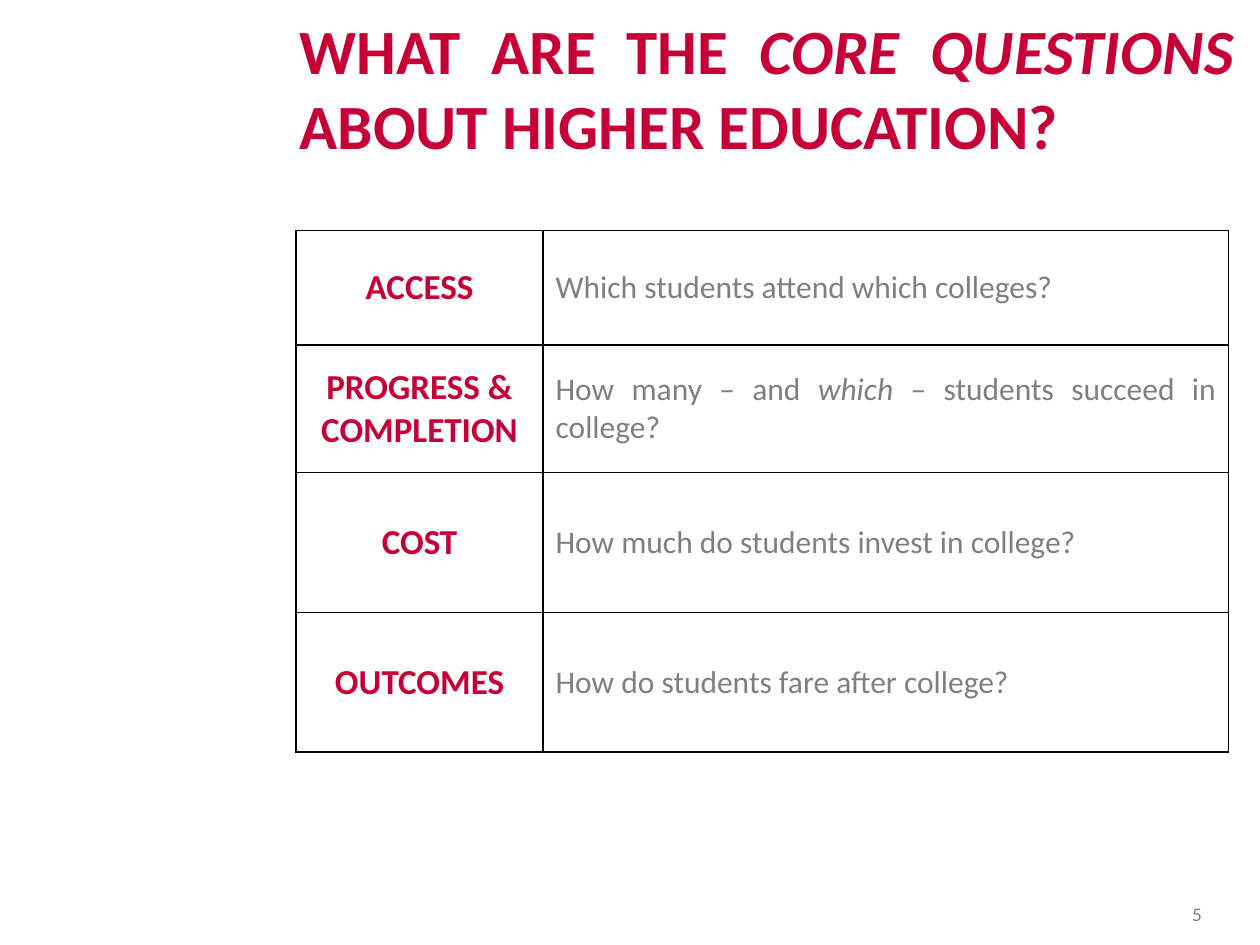
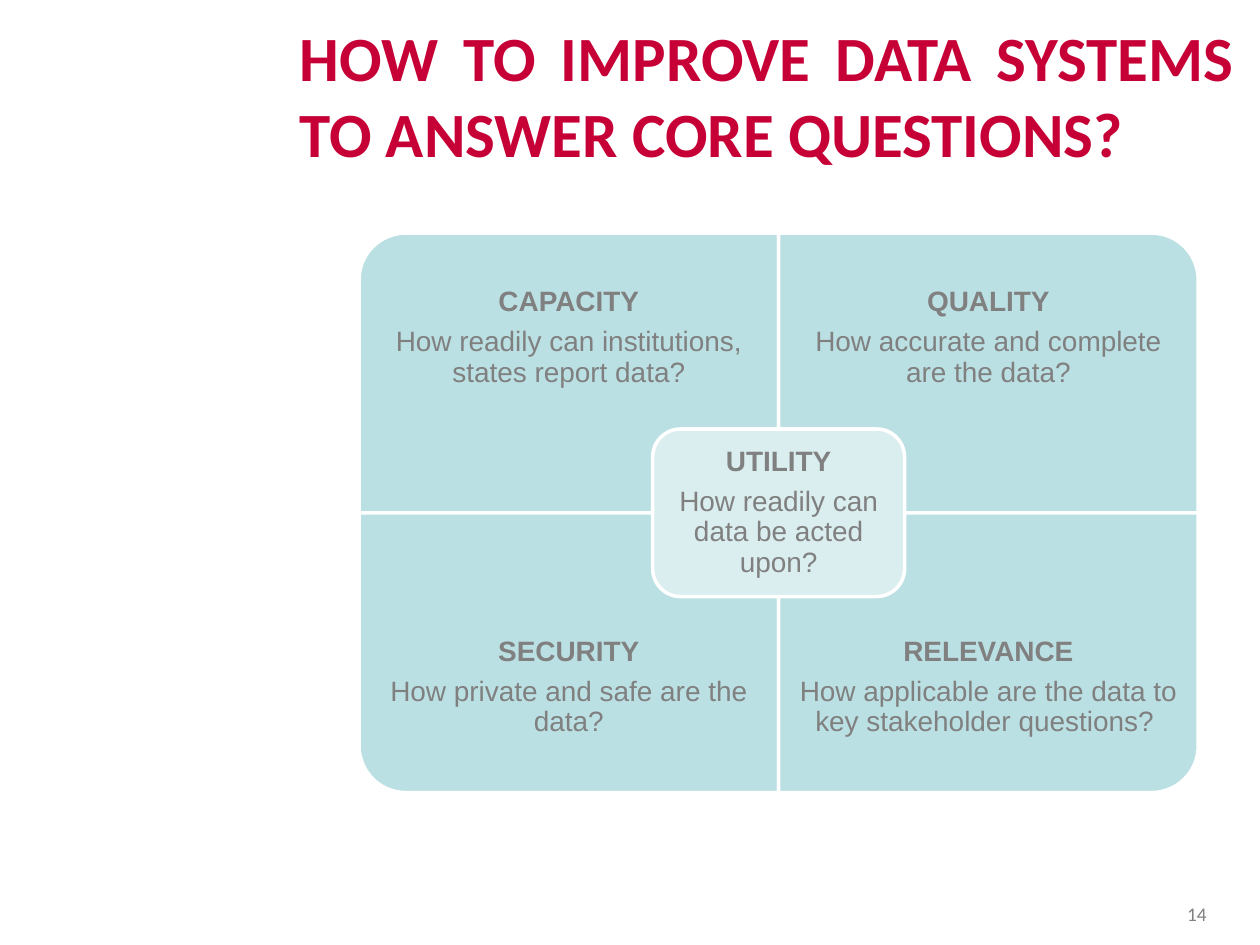
from lxml import etree
from pptx import Presentation, util as u
from pptx.dml.color import RGBColor
from pptx.enum import shapes, text
from pptx.oxml.ns import qn

CRIMSON, GREY, BLACK, WHITE = "C60036", "808080", "000000", "FFFFFF"
ANSWER_GREY, AQUA, PALE_AQUA = "7F7F7F", "BBE0E3", "DAEDEF"
CENTER, JUSTIFY = text.PP_ALIGN.CENTER, text.PP_ALIGN.JUSTIFY
MIDDLE = text.MSO_ANCHOR.MIDDLE

TITLE = dict(name="Calibri", size=36, bold=True, color=CRIMSON)
TOPIC = dict(TITLE, size=20)
ANSWER = dict(name="Calibri", size=18, bold=False, color=ANSWER_GREY)
PAGE = dict(name="Calibri", size=11, color=GREY)
DETAIL = dict(name="Arial", size=16, bold=False, color=GREY)
HEADING = dict(DETAIL, bold=True)


def rgb(value):
    return RGBColor.from_string(value)


class Deck:
    def __init__(self):
        self.prs = Presentation()
        self.prs.slide_width, self.prs.slide_height = u.Inches(10), u.Inches(7.5)
        self.slide = None

    def new_slide(self, title_runs, title_top, page):
        self.slide = self.prs.slides.add_slide(self.prs.slide_layouts[6])
        title = self.text_box(2.28, title_top, 7.61, 1.39)
        self.add_runs(title.paragraphs[0], title_runs, TITLE, JUSTIFY)
        number = self.text_box(9, 7, 1, 0.5, anchor=MIDDLE)
        self.add_runs(number.paragraphs[0], [page], PAGE, CENTER)

    def add_runs(self, paragraph, runs, style, align):
        """Fill a paragraph with runs; every second run is italic."""
        paragraph.alignment = align
        for index, words in enumerate(runs):
            run = paragraph.add_run()
            run.text = words
            for key, value in style.items():
                if key == "color":
                    run.font.color.rgb = rgb(value)
                else:
                    setattr(run.font, key, u.Pt(value) if key == "size" else value)
            run.font.italic = index % 2 == 1

    def text_box(self, left, top, width, height, anchor=text.MSO_ANCHOR.TOP, inset=None):
        box = self.slide.shapes.add_textbox(*map(u.Inches, (left, top, width, height)))
        frame = box.text_frame
        frame.word_wrap = True
        frame.vertical_anchor = anchor
        if inset is not None:
            for side in ("left", "top", "right", "bottom"):
                setattr(frame, f"margin_{side}", u.Inches(inset))
        return frame

    def panel(self, preset, left, top, width, height, fill, rotation=0):
        """Draw a panel that covers the given area after its rotation."""
        if rotation % 180:
            left, top = left + (width - height) / 2, top + (height - width) / 2
            width, height = height, width
        panel = self.slide.shapes.add_shape(
            preset, *map(u.Inches, (left, top, width, height)))
        panel.rotation = rotation
        panel.shadow.inherit = False
        panel.fill.solid()
        panel.fill.fore_color.rgb = rgb(fill)
        panel.line.color.rgb = rgb(WHITE)
        panel.line.width = u.Pt(2)

    def caption(self, left, top, width, height, inset, heading, detail):
        frame = self.text_box(left, top, width, height, MIDDLE, inset)
        first, second = frame.paragraphs[0], frame.add_paragraph()
        self.add_runs(first, [heading], HEADING, CENTER)
        self.add_runs(second, [detail], DETAIL, CENTER)
        first.line_spacing = second.line_spacing = 0.9
        first.space_after = u.Pt(5.6)

    def cell(self, cell, runs, style, align):
        cell.vertical_anchor = MIDDLE
        self.add_runs(cell.text_frame.paragraphs[0], runs, style, align)
        properties = cell._tc.get_or_add_tcPr()
        for edge in ("a:lnL", "a:lnR", "a:lnT", "a:lnB"):
            line = etree.SubElement(properties, qn(edge), w=str(u.Pt(1)))
            solid = etree.SubElement(line, qn("a:solidFill"))
            etree.SubElement(solid, qn("a:srgbClr"), val=BLACK)
        cell.fill.solid()
        cell.fill.fore_color.rgb = rgb(WHITE)

    def question_table(self, left, top, widths, heights, questions):
        area = map(u.Inches, (left, top, sum(widths), sum(heights)))
        table = self.slide.shapes.add_table(len(heights), len(widths), *area).table
        table.first_row = table.horz_banding = False
        for column, width in zip(table.columns, widths):
            column.width = u.Inches(width)
        for row, height, (topic, answer) in zip(table.rows, heights, questions):
            row.height = u.Inches(height)
            self.cell(row.cells[0], [topic], TOPIC, CENTER)
            self.cell(row.cells[1], answer, ANSWER, JUSTIFY)


def core_questions(deck):
    deck.new_slide(["WHAT ARE THE ", "CORE QUESTIONS", " ABOUT HIGHER EDUCATION?"], 0.04, "5")
    deck.question_table(2.35, 1.83, (1.96, 5.44), (0.91, 1.01, 1.11, 1.11), [
        ("ACCESS", ["Which students attend which colleges?"]),
        ("PROGRESS & COMPLETION",
         ["How many – and ", "which ", "– students succeed in college?"]),
        ("COST", ["How much do students invest in college?"]),
        ("OUTCOMES", ["How do students fare after college?"]),
    ])


def data_systems(deck):
    deck.new_slide(["HOW TO IMPROVE DATA SYSTEMS TO ANSWER CORE QUESTIONS?"], 0.1, "14")
    left, top, width, height = 2.85, 1.85, 3.33, 2.22
    caption_height = height * 0.75
    quadrants = [
        (0, 0, 270, "CAPACITY", "How readily can institutions, states report data?"),
        (1, 0, 0, "QUALITY", "How accurate and complete are the data?"),
        (0, 1, 180, "SECURITY", "How private and safe are the data?"),
        (1, 1, 90, "RELEVANCE", "How applicable are the data to key stakeholder questions? "),
    ]
    for column, row, rotation, heading, detail in quadrants:
        x, y = left + column * width, top + row * height
        deck.panel(shapes.MSO_SHAPE.ROUND_1_RECTANGLE, x, y, width, height, AQUA, rotation)
        caption_top = y + row * (height - caption_height)
        deck.caption(x, caption_top, width, caption_height, 0.12, heading, detail)

    hub_width, hub_height, rim = 2, 1.33, 0.07
    x, y = left + width - hub_width / 2, top + height - hub_height / 2
    deck.panel(shapes.MSO_SHAPE.ROUNDED_RECTANGLE, x, y, hub_width, hub_height, PALE_AQUA)
    deck.caption(x + rim, y + rim, hub_width - 2 * rim, hub_height - 2 * rim, rim,
                 "UTILITY", "How readily can data be acted upon?")


def main():
    deck = Deck()
    core_questions(deck)
    data_systems(deck)
    deck.prs.save("out.pptx")


if __name__ == "__main__":
    main()
